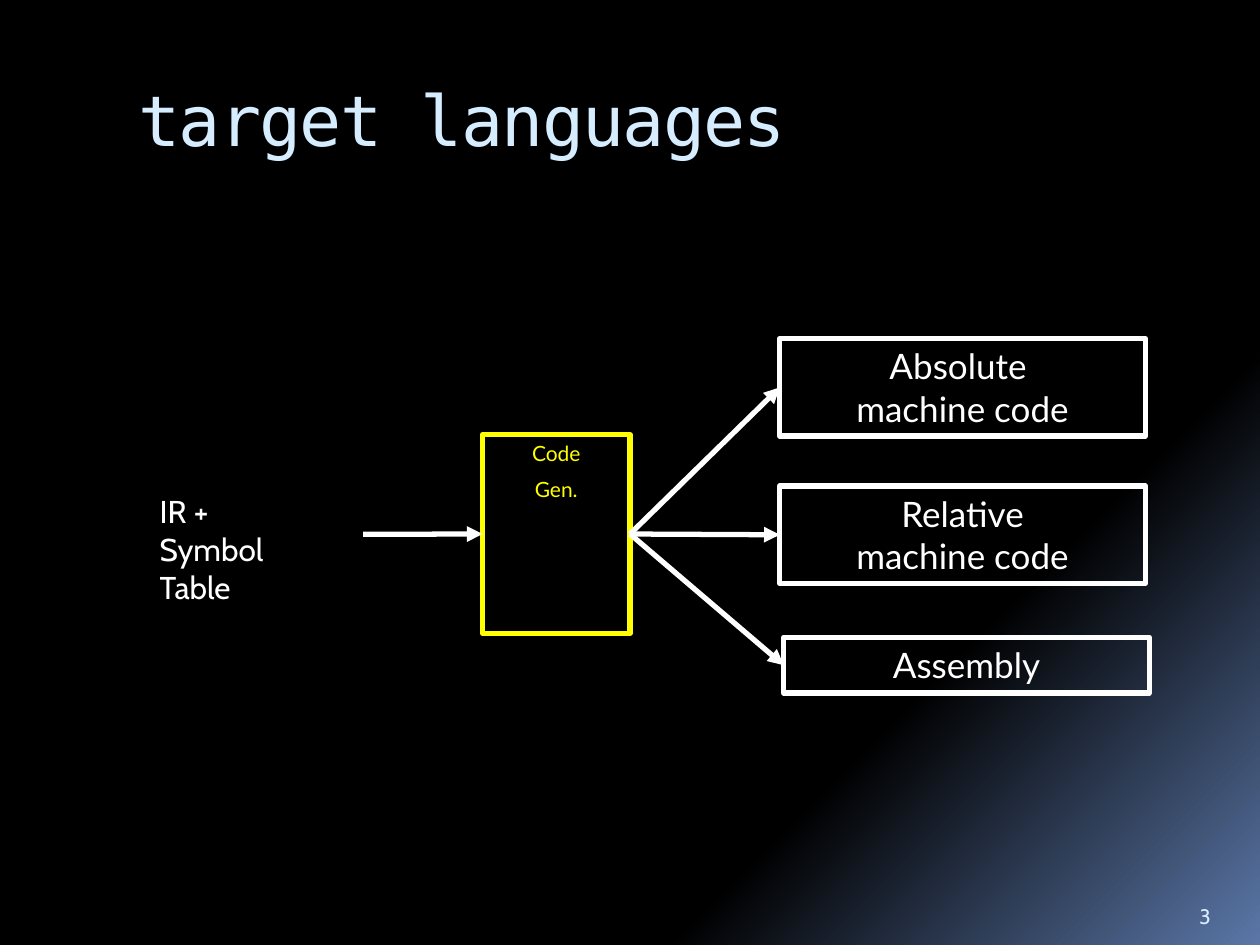
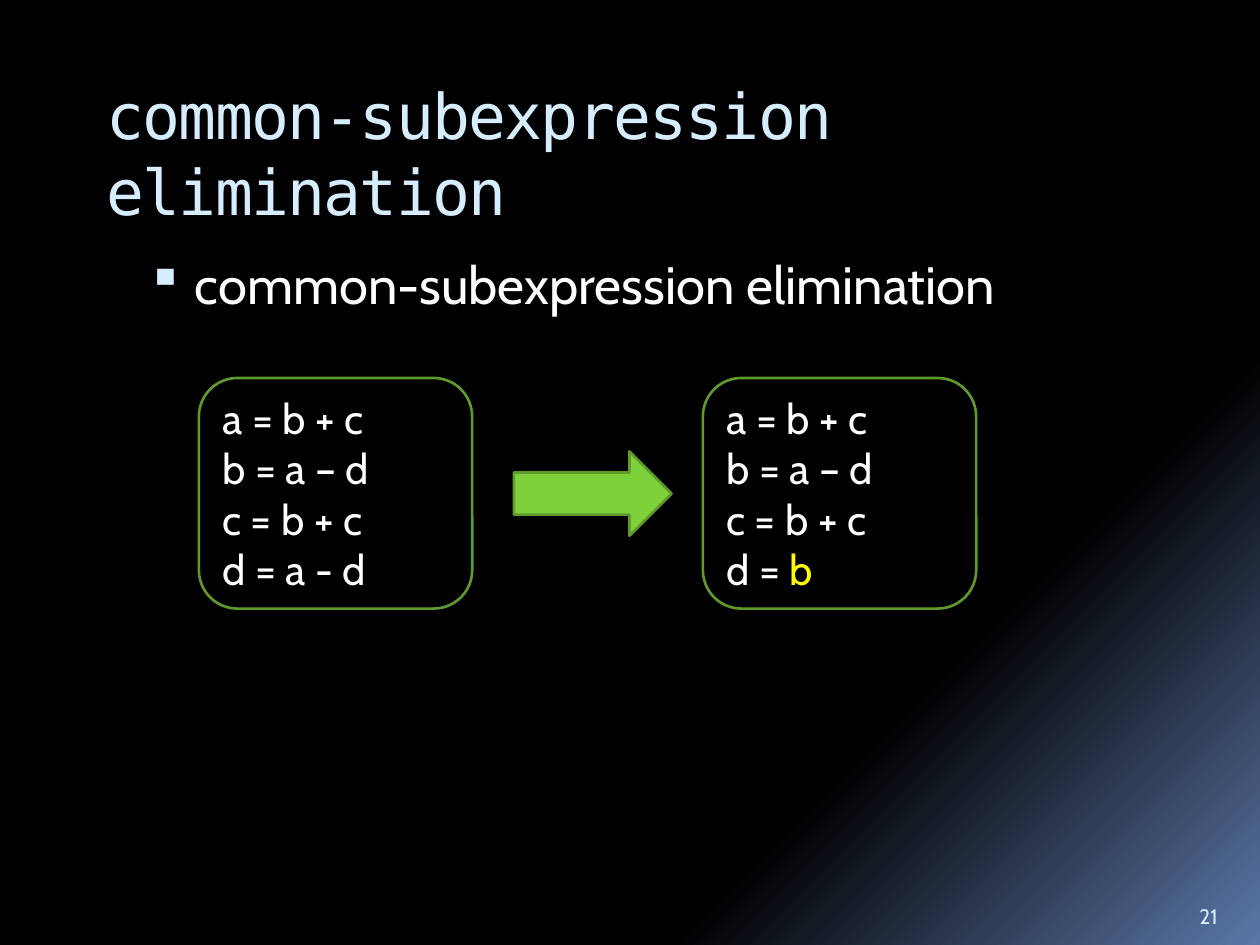
from lxml.etree import SubElement
from pptx import Presentation
from pptx.dml.color import RGBColor
from pptx.enum.shapes import MSO_CONNECTOR as CONN, MSO_SHAPE as SHAPE
from pptx.enum.text import MSO_ANCHOR as ANCHOR, PP_ALIGN as ALIGN
from pptx.oxml.ns import qn
from pptx.util import Cm, Pt

BLACK, BLUE = "000000", "5B77A8"
WHITE, YELLOW, PALE = "FFFFFF", "FFFF00", "D6ECFF"
GREEN, DARK_GREEN = "7FD13B", "5E9B2C"
MONO, BODY, BOX = "DejaVu Sans Mono", "Cabin", "Lato"


def rgb(color):
    return RGBColor.from_string(color)


def format_run(r, font, size, color):
    r.font.name, r.font.size = font, Pt(size)
    r.font.color.rgb = rgb(color)


def write(sp, text, font, size, color, align=ALIGN.LEFT, anchor=ANCHOR.TOP, before=0):
    tf = sp.text_frame
    tf.word_wrap = True
    tf.vertical_anchor = anchor
    tf.text = text
    for p in tf.paragraphs:
        p.alignment = align
        p.space_before = Pt(before)
        for r in p.runs:
            format_run(r, font, size, color)
    return tf


def add_text(s, box, text, font, size, color, **layout):
    sp = s.shapes.add_textbox(*map(Cm, box))
    return write(sp, text, font, size, color, **layout)


def add_box(s, kind, box, line, width, fill=None):
    sp = s.shapes.add_shape(kind, *map(Cm, box))
    sp.shadow.inherit = False
    sp.line.color.rgb = rgb(line)
    sp.line.width = Pt(width)
    if fill:
        sp.fill.solid()
        sp.fill.fore_color.rgb = rgb(fill)
    else:
        sp.fill.background()
    return sp


def add_arrow(s, start, target):
    c = s.shapes.add_connector(CONN.STRAIGHT, 0, 0, 0, 0)
    if isinstance(start, tuple):
        c.begin_x, c.begin_y = map(Cm, start)
    else:
        c.begin_connect(start, 3)
    c.end_connect(target, 1)
    c.line.color.rgb = rgb(WHITE)
    c.line.width = Pt(3)
    SubElement(c.line._get_or_add_ln(), qn("a:tailEnd"), type="triangle")
    SubElement(c._element.spPr, qn("a:effectLst"))


def set_background(master):
    fill = master.background.fill
    fill.gradient()
    fill.gradient_angle = 315
    for stop, position, color in zip(fill.gradient_stops, (0.73, 1), (BLACK, BLUE)):
        stop.position = position
        stop.color.rgb = rgb(color)


def add_slide(prs, title, title_box, title_size, number):
    s = prs.slides.add_slide(prs.slide_layouts[6])
    tf = add_text(s, title_box, title, MONO, title_size, PALE)
    tf.paragraphs[0].runs[0]._r.get_or_add_rPr().set("spc", "-100")
    add_text(s, (23.93, 17.83, 1.27, 1.02), number, BODY, 12, PALE, anchor=ANCHOR.BOTTOM)
    return s


def add_bullet(s, box, text):
    p = add_text(s, box, text, BODY, 30, WHITE, before=7).paragraphs[0]
    pPr = p._p.get_or_add_pPr()
    pPr.set("marL", str(Cm(1.14)))
    pPr.set("indent", str(Cm(-0.97)))
    SubElement(SubElement(pPr, qn("a:buClr")), qn("a:srgbClr"), val=PALE)
    SubElement(pPr, qn("a:buSzPct"), val="95000")
    SubElement(pPr, qn("a:buChar"), char="▪")


def add_target_diagram(s, x, y):
    add_text(s, (x, y + 2.97, 4.06, 1.8), "IR +\nSymbol Table", BODY, 18, WHITE)
    generator = add_box(s, SHAPE.RECTANGLE, (x + 6.76, y + 1.93, 2.97, 4.01), YELLOW, 3)
    write(generator, "Code\nGen.", BOX, 12, YELLOW, align=ALIGN.CENTER, before=6)
    add_arrow(s, (x + 4.35, y + 3.94), generator)
    targets = [
        ("Absolute \vmachine code", 12.75, 0, 1.96),
        ("Relative\vmachine code", 12.75, 2.97, 1.96),
        ("Assembly", 12.83, 6.02, 1.12),
    ]
    for text, dx, dy, height in targets:
        target = add_box(s, SHAPE.RECTANGLE, (x + dx, y + dy, 7.37, height), WHITE, 3)
        write(target, text, BOX, 20, WHITE, align=ALIGN.CENTER)
        add_arrow(s, generator, target)


def add_code(s, x, y, code, replaced=""):
    sp = add_box(s, SHAPE.ROUNDED_RECTANGLE, (x, y, 5.51, 4.65), DARK_GREEN, 1.5)
    tf = write(sp, code, BODY, 24, WHITE, anchor=ANCHOR.MIDDLE)
    if replaced:
        r = tf.paragraphs[-1].add_run()
        r.text = replaced
        format_run(r, BODY, 24, YELLOW)


def add_code_comparison(s, x, y):
    shared = "a = b + c\nb = a – d\nc = b + c\nd = "
    add_code(s, x, y, shared + "a - d")
    add_code(s, x + 10.16, y, shared, replaced="b")
    add_box(s, SHAPE.RIGHT_ARROW, (x + 6.35, y + 1.48, 3.18, 1.7), DARK_GREEN, 1.5, GREEN)


def main():
    prs = Presentation()
    prs.slide_width, prs.slide_height = Cm(25.4), Cm(19.05)
    set_background(prs.slide_master)

    s = add_slide(prs, "target languages", (2.54, 1.42, 21.59, 2.54), 40, "3")
    add_target_diagram(s, 2.97, 6.83)

    title = "common-subexpression elimination"
    s = add_slide(prs, title, (1.9, 1.42, 22.23, 2.54), 36, "21")
    add_bullet(s, (2.54, 4.95, 21.59, 12.7), title)
    add_code_comparison(s, 4.01, 7.62)

    prs.save("out.pptx")


if __name__ == "__main__":
    main()
